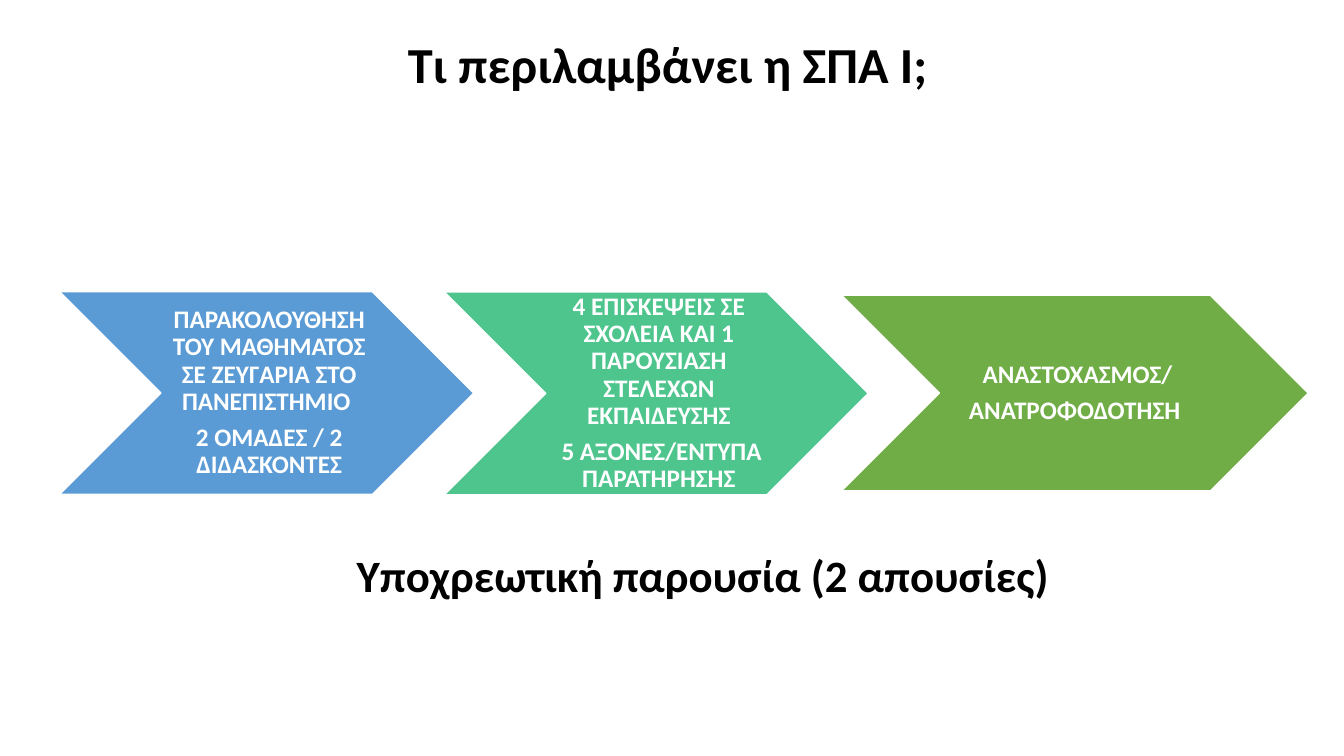
from pptx import Presentation
from pptx import util as u
from pptx.dml.color import RGBColor
from pptx.enum import shapes, text

BLACK = RGBColor(0x00, 0x00, 0x00)
WHITE = RGBColor(0xFF, 0xFF, 0xFF)
BLUE = RGBColor(0x5B, 0x9B, 0xD5)
TEAL = RGBColor(0x4D, 0xC5, 0x8D)
GREEN = RGBColor(0x70, 0xAD, 0x47)


class Deck:
    """Holds the text style and the current slide."""
    font = "Calibri"

    def __init__(self, prs):
        self.s = prs.slides.add_slide(prs.slide_layouts[6])

    def text(self, box, paragraphs, size, color=BLACK, align=text.PP_ALIGN.CENTER,
             anchor=text.MSO_ANCHOR.MIDDLE, spacing=0.9, after=0, insets=None, wrap=True):
        sp = self.s.shapes.add_textbox(*map(u.Cm, box))
        tf = sp.text_frame
        tf.word_wrap = wrap
        tf.vertical_anchor = anchor
        if insets:
            tf.margin_left, tf.margin_top, tf.margin_right, tf.margin_bottom = map(u.Cm, insets)
        for i, line in enumerate(paragraphs):
            p = tf.add_paragraph() if i else tf.paragraphs[0]
            p.alignment = align
            p.line_spacing = spacing
            p.space_after = u.Pt(after)
            r = p.add_run()
            r.text = line
            r.font.name = self.font
            r.font.size = u.Pt(size)
            r.font.bold = True
            r.font.color.rgb = color
        return sp

    def chevron(self, box, fill, paragraphs):
        sp = self.s.shapes.add_shape(shapes.MSO_SHAPE.CHEVRON, *map(u.Cm, box))
        sp.shadow.inherit = False
        sp.fill.solid()
        sp.fill.fore_color.rgb = fill
        sp.line.color.rgb = WHITE
        sp.line.width = u.Pt(1)
        # The label lies between the notch and the point, each half the height deep
        x, y, w, h = box
        self.text((x + h / 2, y, w - h, h), paragraphs, 18, WHITE,
                  after=6.3, insets=(0.2, 0.07, 0.07, 0.07))


def main():
    prs = Presentation()
    prs.slide_width, prs.slide_height = u.Cm(33.87), u.Cm(19.05)
    deck = Deck(prs)

    # Title
    deck.text((6.02, 0.84, 21.62, 1.73), ["Τι περιλαμβάνει η ΣΠΑ Ι;"], 36)

    # Three steps
    steps = [
        ((1.5, 7.35, 10.44, 5.11), BLUE,
         ["ΠΑΡΑΚΟΛΟΥΘΗΣΗ ΤΟΥ ΜΑΘΗΜΑΤΟΣ ΣΕ ΖΕΥΓΑΡΙΑ ΣΤΟ ΠΑΝΕΠΙΣΤΗΜΙΟ ",
          "2 ΟΜΑΔΕΣ / 2 ΔΙΔΑΣΚΟΝΤΕΣ"]),
        ((11.2, 7.36, 10.68, 5.11), TEAL,
         ["4 ΕΠΙΣΚΕΨΕΙΣ ΣΕ ΣΧΟΛΕΙΑ ΚΑΙ 1 ΠΑΡΟΥΣΙΑΣΗ ΣΤΕΛΕΧΩΝ ΕΚΠΑΙΔΕΥΣΗΣ",
          " 5 ΑΞΟΝΕΣ/ΕΝΤΥΠΑ ΠΑΡΑΤΗΡΗΣΗΣ"]),
        ((21.21, 7.44, 11.76, 4.93), GREEN,
         ["ΑΝΑΣΤΟΧΑΣΜΟΣ/", "ΑΝΑΤΡΟΦΟΔΟΤΗΣΗ "]),
    ]
    for box, fill, paragraphs in steps:
        deck.chevron(box, fill, paragraphs)

    # Attendance rule
    rule = deck.text((8.74, 13.67, 18.11, 1.63), ["Υποχρεωτική παρουσία (2 απουσίες)"], 32,
                     align=text.PP_ALIGN.LEFT, anchor=text.MSO_ANCHOR.TOP, spacing=1.0, wrap=False)
    rule.text_frame.auto_size = text.MSO_AUTO_SIZE.SHAPE_TO_FIT_TEXT

    prs.save("out.pptx")


if __name__ == "__main__":
    main()
